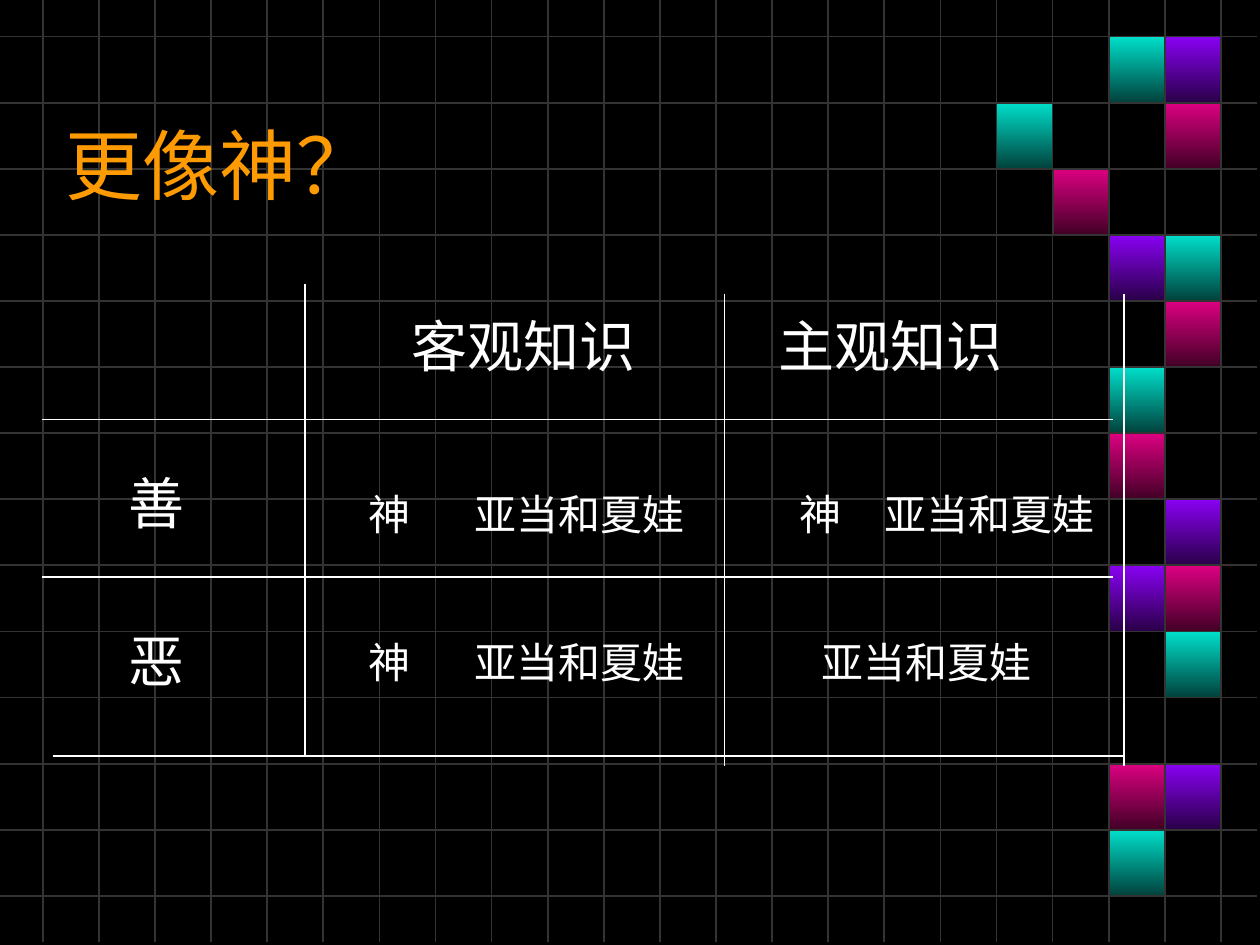
import pptx
import pptx.dml.color
import pptx.enum.shapes
import pptx.enum.text
import pptx.oxml
import pptx.oxml.ns
import pptx.util
from pptx.util import Inches

FONT = "Noto Sans CJK SC"
COLORS = {
    "background": "000000",
    "grid": "333333",
    "title": "FE9B03",
    "white": "FFFFFF",
}
GRADIENTS = {
    "teal": ("00DFCA", "00423C"),
    "purple": ("8901F3", "290048"),
    "pink": ("DC0081", "420026"),
}
GRID_LEFT, GRID_TOP = 0.34, 0.29
COLUMN_COUNT, ROW_COUNT = 22, 14
COLUMN_WIDTH = (9.69 - GRID_LEFT) / (COLUMN_COUNT - 1)
ROW_HEIGHT = (7.11 - GRID_TOP) / (ROW_COUNT - 1)

TILES = [
    (19, 12, "teal"), (20, 11, "purple"), (19, 11, "pink"),
    (20, 9, "teal"), (20, 8, "pink"), (19, 8, "purple"),
    (20, 7, "purple"), (19, 6, "pink"), (19, 5, "teal"),
    (20, 4, "pink"), (20, 3, "teal"), (19, 3, "purple"),
    (18, 2, "pink"), (20, 1, "pink"), (17, 1, "teal"),
    (20, 0, "purple"), (19, 0, "teal"),
]
TABLE_LINES = [
    (0.33, 3.33, 8.83, 3.33),
    (0.33, 4.58, 8.83, 4.58),
    (0.42, 6, 8.92, 6),
    (2.42, 2.25, 2.42, 6),
    (5.75, 2.33, 5.75, 6.08),
    (8.92, 2.33, 8.92, 6.08),
]
HEADINGS = [
    ("善", 0.92, 3.67, 1.08),
    ("恶", 0.92, 4.92, 1.08),
    ("客观知识", 3.17, 2.42, 2.33),
    ("主观知识", 6.08, 2.42, 2.33),
]
ENTRIES = [
    ("神", 2.83, 3.83, 0.54),
    ("神", 6.25, 3.83, 0.54),
    ("神", 2.83, 5, 0.54),
    ("亚当和夏娃", 3.67, 3.83, 1.88),
    ("亚当和夏娃", 6.92, 3.83, 1.88),
    ("亚当和夏娃", 3.67, 5, 1.88),
    ("亚当和夏娃", 6.42, 5, 1.88),
]


def rgb(value):
    return pptx.dml.color.RGBColor.from_string(value)


def grid_x(column):
    return GRID_LEFT + column * COLUMN_WIDTH


def grid_y(row):
    return GRID_TOP + row * ROW_HEIGHT


def style_line(line, color):
    line.color.rgb = rgb(COLORS[color])
    line.width = pptx.util.Pt(1)


def add_line(slide, start_x, start_y, end_x, end_y, color):
    connector = slide.shapes.add_connector(
        pptx.enum.shapes.MSO_CONNECTOR.STRAIGHT,
        Inches(start_x), Inches(start_y), Inches(end_x), Inches(end_y))
    style_line(connector.line, color)
    properties = connector._element.spPr
    properties.append(pptx.oxml.parse_xml(
        f"<a:effectLst {pptx.oxml.ns.nsdecls('a')}/>"))


def add_grid(slide):
    for row in range(ROW_COUNT):
        add_line(slide, 0, grid_y(row), 9.98, grid_y(row), "grid")
    for column in range(COLUMN_COUNT):
        add_line(slide, grid_x(column), 0, grid_x(column), 7.48, "grid")


def add_tile(slide, column, row, gradient):
    shape = slide.shapes.add_shape(
        pptx.enum.shapes.MSO_SHAPE.RECTANGLE,
        Inches(grid_x(column)), Inches(grid_y(row)),
        Inches(COLUMN_WIDTH), Inches(ROW_HEIGHT))
    shape.shadow.inherit = False
    shape.fill.gradient()
    shape.fill.gradient_angle = 270
    for stop, color in zip(shape.fill.gradient_stops, GRADIENTS[gradient]):
        stop.color.rgb = rgb(color)
    style_line(shape.line, "grid")


def add_text(slide, text, left, top, width, height, size, color="white", wrap=True):
    shape = slide.shapes.add_textbox(
        Inches(left), Inches(top), Inches(width), Inches(height))
    frame = shape.text_frame
    frame.word_wrap = wrap
    run = frame.paragraphs[0].add_run()
    run.text = text
    run.font.size = pptx.util.Pt(size)
    run.font.color.rgb = rgb(COLORS[color])
    run.font.name = FONT
    run.font._element.append(pptx.oxml.parse_xml(
        f'<a:ea {pptx.oxml.ns.nsdecls("a")} typeface="{FONT}"/>'))
    return frame


def main():
    presentation = pptx.Presentation()
    presentation.slide_width = Inches(10)
    presentation.slide_height = Inches(7.5)
    slide = presentation.slides.add_slide(presentation.slide_layouts[6])
    slide.background.fill.solid()
    slide.background.fill.fore_color.rgb = rgb(COLORS["background"])

    add_grid(slide)
    for column, row, gradient in TILES:
        add_tile(slide, column, row, gradient)

    title = add_text(slide, "更像神？", 0.42, 0.67, 8.5, 1.26, 44, "title")
    title.vertical_anchor = pptx.enum.text.MSO_ANCHOR.MIDDLE

    for ends in TABLE_LINES:
        add_line(slide, *ends, "white")
    for text, left, top, width in ENTRIES:
        add_text(slide, text, left, top, width, 0.5, 24, wrap=False)
    for text, left, top, width in HEADINGS:
        add_text(slide, text, left, top, width, 0.64, 32)

    presentation.save("out.pptx")


if __name__ == "__main__":
    main()
